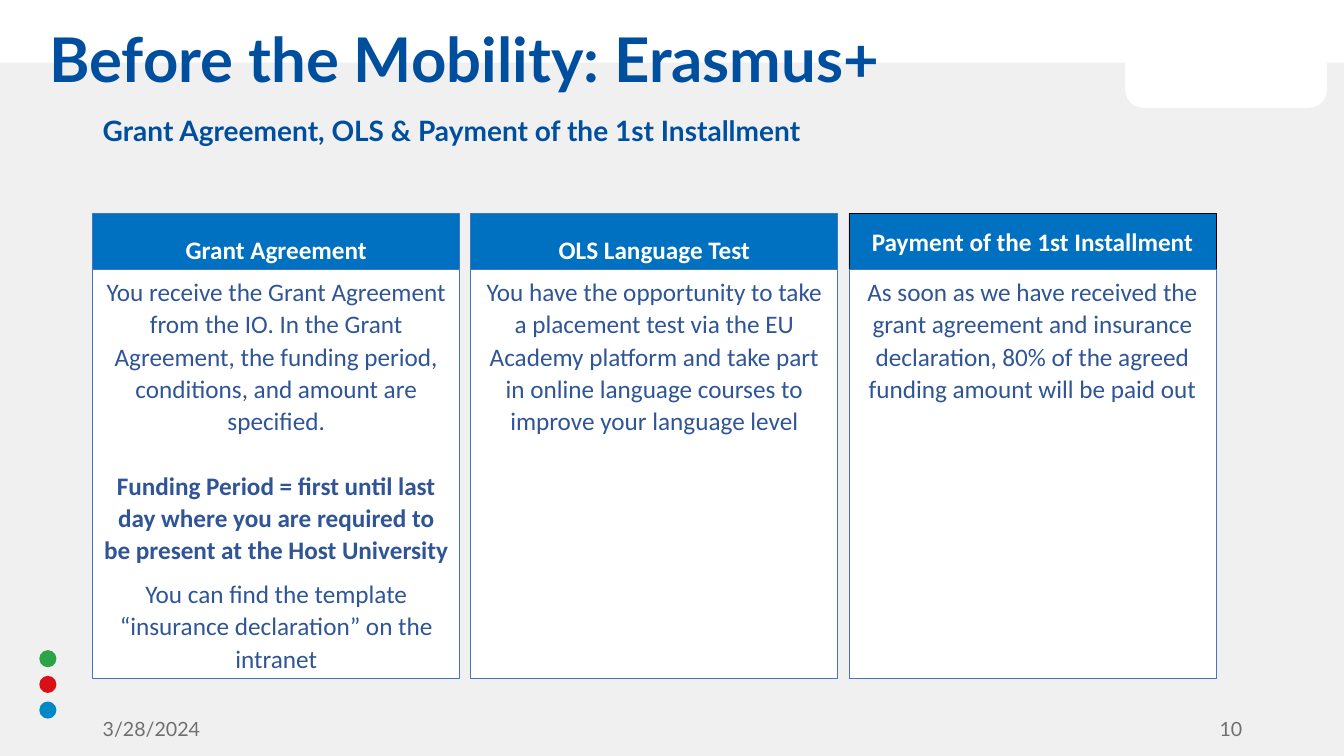
from dataclasses import dataclass

from pptx import Presentation
from pptx.dml.color import RGBColor
from pptx.enum.shapes import MSO_SHAPE
from pptx.enum.text import MSO_ANCHOR, PP_ALIGN
from pptx.util import Inches, Pt

RECT, OVAL, TAB = MSO_SHAPE.RECTANGLE, MSO_SHAPE.OVAL, MSO_SHAPE.ROUND_2_SAME_RECTANGLE
LEFT, CENTER, RIGHT = PP_ALIGN.LEFT, PP_ALIGN.CENTER, PP_ALIGN.RIGHT
TOP, MIDDLE, BOTTOM = MSO_ANCHOR.TOP, MSO_ANCHOR.MIDDLE, MSO_ANCHOR.BOTTOM

COLORS = {
    "panel": "F0F0F0", "white": "FFFFFF", "black": "000000",
    "green": "2BA346", "red": "D91016", "blue": "0088C6",
    "title": "004F9F", "footer": "6F6F6E",
    "header": "0070C0", "border": "4472C4", "body": "2F5597",
}


@dataclass
class Para:
    text: str
    size: float
    color: str
    font: str = "Calibri"
    bold: bool = False
    align: PP_ALIGN = CENTER
    spacing: float = 1.07
    after: float = 8


@dataclass
class Label:
    box: tuple[float, float, float, float]
    para: Para
    anchor: MSO_ANCHOR


@dataclass
class Column:
    header: Para
    body: list[Para]
    anchor: MSO_ANCHOR = BOTTOM
    border: str = "border"


def rgb(name: str) -> RGBColor:
    return RGBColor.from_string(COLORS[name])


def write(sp, paras: list[Para], anchor: MSO_ANCHOR) -> None:
    tf = sp.text_frame
    tf.word_wrap = True
    tf.vertical_anchor = anchor
    for i, para in enumerate(paras):
        p = tf.add_paragraph() if i else tf.paragraphs[0]
        p.text = para.text
        p.alignment = para.align
        p.line_spacing = para.spacing
        p.space_after = Pt(para.after)
        p.font.name, p.font.size, p.font.bold = para.font, Pt(para.size), para.bold
        p.font.color.rgb = rgb(para.color)


def add_shape(s, kind: MSO_SHAPE, box: tuple[float, float, float, float],
              fill: str, border: str = ""):
    sp = s.shapes.add_shape(kind, *map(Inches, box))
    sp.shadow.inherit = False
    sp.fill.solid()
    sp.fill.fore_color.rgb = rgb(fill)
    if border:
        sp.line.color.rgb = rgb(border)
        sp.line.width = Pt(0.5)
    else:
        sp.line.fill.background()
    return sp


def add_label(s, label: Label) -> None:
    sp = s.shapes.add_textbox(*map(Inches, label.box))
    write(sp, [label.para], label.anchor)


def add_column(s, left: float, col: Column) -> None:
    sp = add_shape(s, RECT, (left, 2.12, 3.64, 0.55), "header", col.border)
    write(sp, [col.header], col.anchor)
    sp = add_shape(s, RECT, (left, 2.67, 3.64, 4.06), "white", "border")
    write(sp, col.body, TOP)


def heading(text: str, spacing: float = 1.07) -> Para:
    return Para(text, 18, "white", bold=True, spacing=spacing)


def body(text: str, bold: bool = False, after: float = 8) -> Para:
    return Para(text, 18, "body", bold=bold, after=after)


def lato(text: str, size: float, color: str, bold: bool = False,
         align: PP_ALIGN = LEFT, spacing: float = 1) -> Para:
    return Para(text, size, color, "Lato", bold, align, spacing, 0)


LABELS = [
    Label((0.39, 0.24, 10.77, 0.77),
          lato("Before the Mobility: Erasmus+", 44, "title", True, spacing=0.9), TOP),
    Label((0.92, 1.11, 10.25, 0.39),
          lato("Grant Agreement, OLS & Payment of the 1st Installment",
               20, "title", True, spacing=0.9), TOP),
    Label((0.92, 7.07, 3, 0.31), lato("3/28/2024", 14, "footer"), MIDDLE),
    Label((9.42, 7.07, 3, 0.31), lato("10", 14, "footer", align=RIGHT), MIDDLE),
]

COLUMNS = [
    Column(heading("Grant Agreement"), [
        body("You receive the Grant Agreement from the IO. In the Grant Agreement, "
             "the funding period, conditions, and amount are specified.", after=23),
        body("Funding Period = first until last day where you are required to be "
             "present at the Host University", bold=True),
        body("You can find the template “insurance declaration” on the intranet"),
    ]),
    Column(heading("OLS Language Test"), [
        body("You have the opportunity to take a placement test via the EU Academy "
             "platform and take part in online language courses to improve your "
             "language level"),
    ]),
    Column(heading("Payment of the 1st Installment", 1), [
        body("As soon as we have received the grant agreement and insurance "
             "declaration, 80% of the agreed funding amount will be paid out"),
    ], MIDDLE, "black"),
]


def main() -> None:
    prs = Presentation()
    prs.slide_width, prs.slide_height = Inches(13.33), Inches(7.5)
    s = prs.slides.add_slide(prs.slide_layouts[6])

    # Backdrop: grey panel, dots and white tab
    add_shape(s, RECT, (0, 0.62, 13.33, 6.88), "panel")
    for i, color in enumerate(("green", "red", "blue")):
        add_shape(s, OVAL, (0.39, 6.45 + 0.255 * i, 0.17, 0.17), color)
    add_shape(s, TAB, (11.16, 0, 2, 1.07), "white").rotation = 180

    # Title, subtitle and footer
    for label in LABELS:
        add_label(s, label)

    # Three columns
    for i, col in enumerate(COLUMNS):
        add_column(s, 0.92 + 3.75 * i, col)

    prs.save("out.pptx")


if __name__ == "__main__":
    main()
